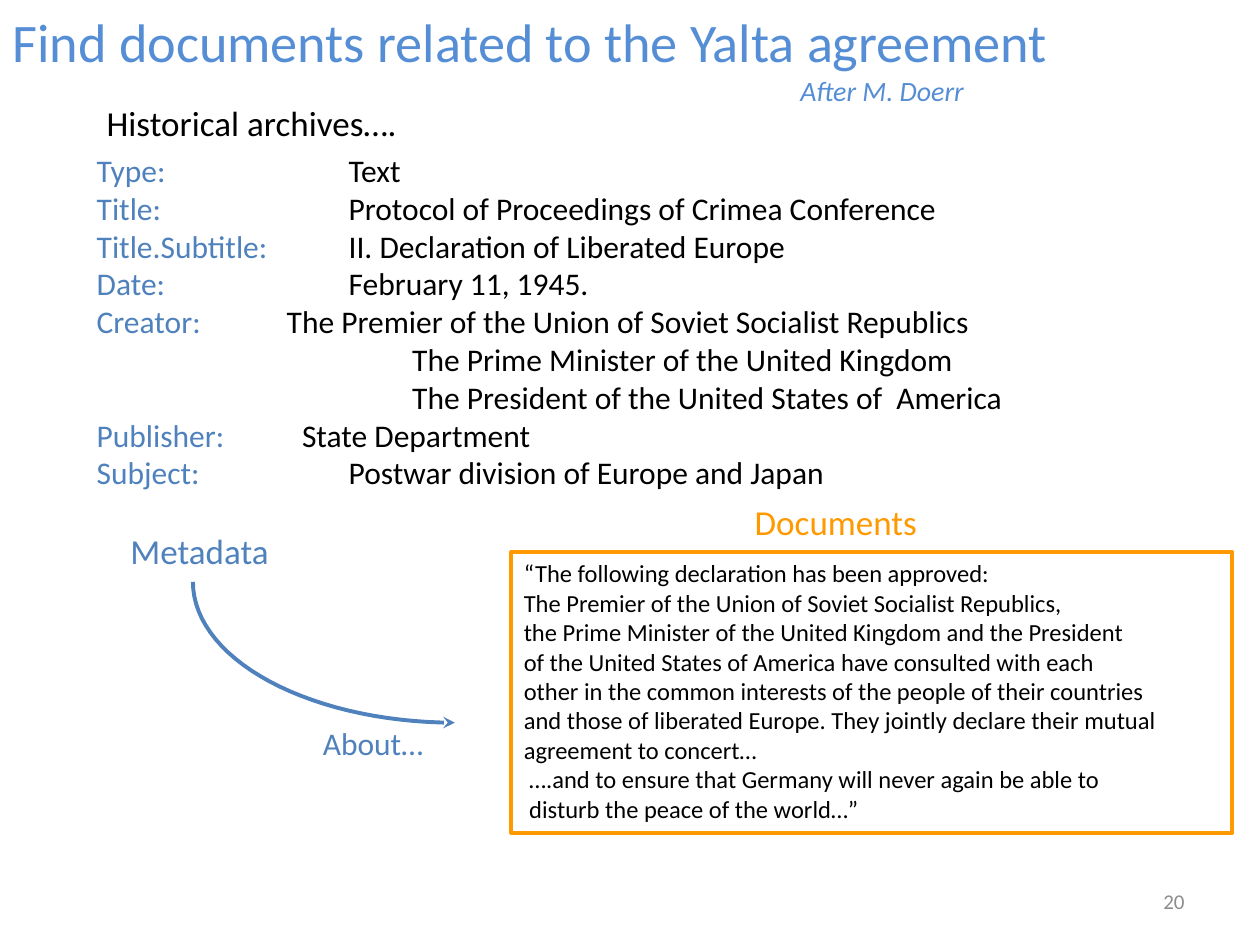
from math import cos, pi, sin

from lxml.etree import SubElement
from pptx import Presentation
from pptx.dml.color import RGBColor
from pptx.enum.shapes import MSO_SHAPE
from pptx.enum.text import MSO_ANCHOR, MSO_AUTO_SIZE, PP_ALIGN
from pptx.oxml.ns import qn
from pptx.util import Cm, Pt

TITLE_BLUE = "558ED5"
BLUE = "4F81BD"
ORANGE = "FF9900"
BLACK = "000000"
GRAY = "8C8C8C"

METADATA = [
    ("Type:", "Text", 5.08),
    ("Title:", "Protocol of Proceedings of Crimea Conference", 5.08),
    ("Title.Subtitle:", "II. Declaration of Liberated Europe", 5.08),
    ("Date:", "February 11, 1945.", 5.08),
    ("Creator:", "The Premier of the Union of Soviet Socialist Republics", 3.83),
    ("", "The Prime Minister of the United Kingdom", 6.36),
    ("", "The President of the United States of  America", 6.36),
    ("Publisher:", "State Department", 4.14),
    ("Subject:", "Postwar division of Europe and Japan", 5.08),
]

DECLARATION = [
    ("“The following declaration has been approved:", 0),
    ("The Premier of the Union of Soviet Socialist Republics,", 0),
    ("the Prime Minister of the United Kingdom and the President", 0),
    ("of the United States of America have consulted with each", 0),
    ("other in the common interests of the people of their countries", 0),
    ("and those of liberated Europe. They jointly declare their mutual", 0),
    ("agreement to concert…", 0),
    ("….and to ensure that Germany will never again be able to", 0.11),
    ("disturb the peace of the world…”", 0.11),
]


def color(hex_string):
    return RGBColor.from_string(hex_string)


def add_text(paragraph, text, size=18, fill=BLACK, italic=False, font="Calibri"):
    run = paragraph.add_run()
    run.text = text
    run.font.name = font
    run.font.size = Pt(size)
    run.font.italic = italic
    run.font.color.rgb = color(fill)


def add_tab_stop(paragraph, position):
    tabs = SubElement(paragraph._p.get_or_add_pPr(), qn("a:tabLst"))
    SubElement(tabs, qn("a:tab"), pos=str(Cm(position)), algn="l")


def paragraphs(frame, count):
    while len(frame.paragraphs) < count:
        frame.add_paragraph()
    return frame.paragraphs


class SlideBuilder:
    line_width = Pt(2.25)

    def __init__(self, presentation):
        self.slide = presentation.slides.add_slide(presentation.slide_layouts[5])
        self.shapes = self.slide.shapes

    def title(self, text, credit, credit_position):
        shape = self.shapes.title
        shape.left, shape.top, shape.width, shape.height = 0, 0, Cm(25.4), Cm(2.34)
        frame = shape.text_frame
        frame.auto_size = MSO_AUTO_SIZE.NONE
        frame.vertical_anchor = MSO_ANCHOR.MIDDLE
        heading, byline = paragraphs(frame, 2)
        heading.alignment = byline.alignment = PP_ALIGN.LEFT
        add_text(heading, text, size=31, fill=TITLE_BLUE)
        add_tab_stop(byline, credit_position)
        add_text(byline, "\t" + credit, size=16, fill=TITLE_BLUE, italic=True)

    def text_box(self, left, top, width, height, wrap=True):
        shape = self.shapes.add_textbox(Cm(left), Cm(top), Cm(width), Cm(height))
        shape.text_frame.word_wrap = wrap
        return shape.text_frame

    def label(self, text, left, top, width, height,
              alignment=PP_ALIGN.CENTER, anchor=MSO_ANCHOR.TOP, **text_format):
        frame = self.text_box(left, top, width, height, wrap=False)
        frame.vertical_anchor = anchor
        paragraph = frame.paragraphs[0]
        paragraph.alignment = alignment
        add_text(paragraph, text, **text_format)

    def metadata(self, rows, left, top, width, height):
        frame = self.text_box(left, top, width, height)
        for paragraph, (name, value, position) in zip(paragraphs(frame, len(rows)), rows):
            add_tab_stop(paragraph, position)
            if name:
                add_text(paragraph, name, fill=BLUE)
            add_text(paragraph, "\t" + value)

    def document(self, lines, left, top, width, height):
        shape = self.shapes.add_shape(
            MSO_SHAPE.RECTANGLE, Cm(left), Cm(top), Cm(width), Cm(height))
        shape.shadow.inherit = False
        shape.fill.background()
        shape.line.color.rgb = color(ORANGE)
        shape.line.width = self.line_width
        frame = shape.text_frame
        frame.word_wrap = True
        frame.vertical_anchor = MSO_ANCHOR.TOP
        for paragraph, (text, indent) in zip(paragraphs(frame, len(lines)), lines):
            paragraph.alignment = PP_ALIGN.LEFT
            if indent:
                paragraph._p.get_or_add_pPr().set("marL", str(Cm(indent)))
            add_text(paragraph, text, size=14)

    def curved_arrow(self, left, top, width, height, steps=30):
        angles = [pi / 2 * step / steps for step in range(steps + 1)]
        points = [(Cm(left + width * (1 - cos(angle))), Cm(top + height * sin(angle)))
                  for angle in angles]
        builder = self.shapes.build_freeform(*points[0])
        builder.add_line_segments(points[1:], close=False)
        shape = builder.convert_to_shape()
        shape.shadow.inherit = False
        shape.fill.background()
        shape.line.color.rgb = color(BLUE)
        shape.line.width = self.line_width
        SubElement(shape.line._get_or_add_ln(), qn("a:tailEnd"), type="stealth")


def main():
    presentation = Presentation()
    presentation.slide_width = Cm(25.4)
    presentation.slide_height = Cm(19.05)

    builder = SlideBuilder(presentation)
    builder.title("Find documents related to the Yalta agreement", "After M. Doerr", 15.88)
    builder.metadata(METADATA, 1.7, 2.92, 21.67, 7.11)
    builder.document(DECLARATION, 10.31, 11.13, 14.53, 5.66)
    builder.label("Documents", 14.96, 9.96, 3.78, 1.09, size=20, fill=ORANGE)
    builder.label("Metadata", 2.36, 10.54, 3.33, 1.09, size=20, fill=BLUE)
    builder.curved_arrow(3.89, 11.73, 5.28, 2.84)
    builder.label("About…", 6.25, 14.48, 2.54, 1.02, fill=BLUE)
    builder.label("Historical archives….", 1.9, 1.93, 7.82, 1.09,
                  alignment=PP_ALIGN.LEFT, size=20)
    builder.label("20", 18.21, 17.65, 5.92, 1.02, alignment=PP_ALIGN.RIGHT,
                  anchor=MSO_ANCHOR.MIDDLE, size=12, fill=GRAY)

    presentation.save("out.pptx")


if __name__ == "__main__":
    main()
